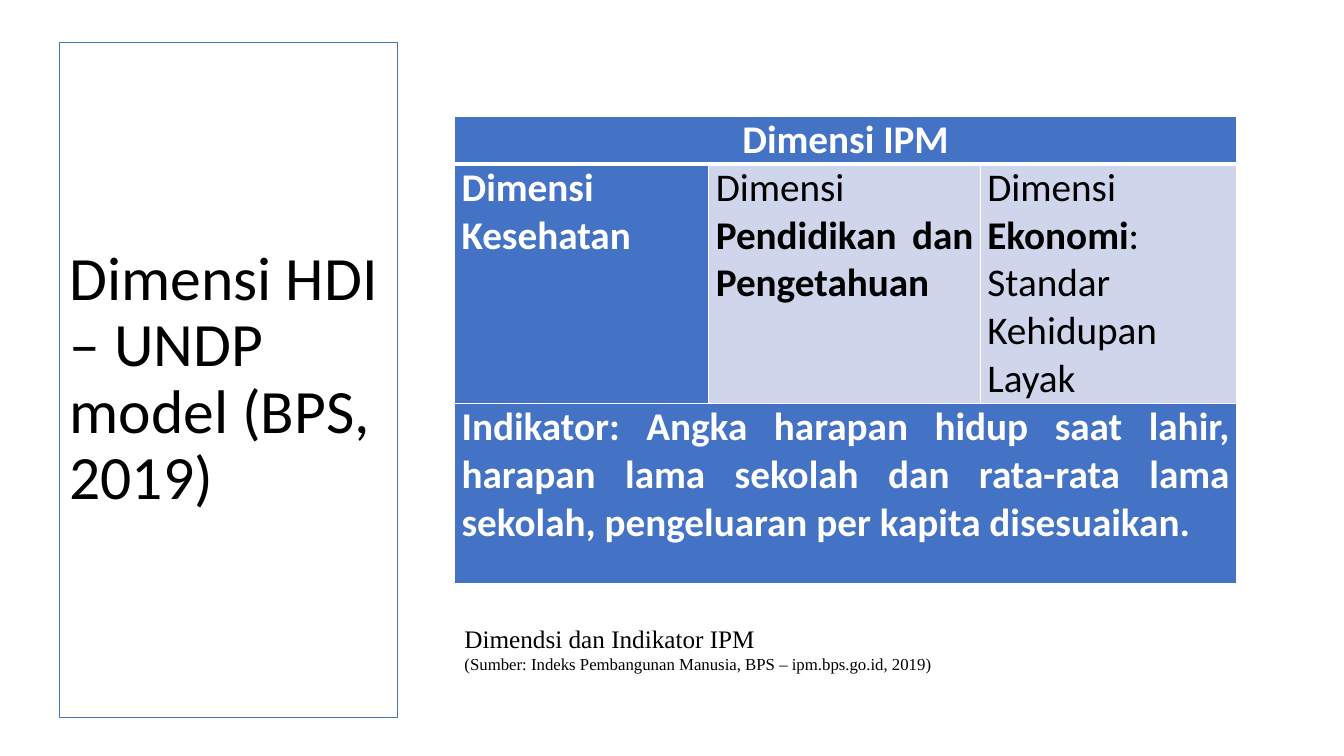
from pptx import Presentation
from pptx.dml.color import RGBColor
from pptx.enum.text import MSO_ANCHOR, MSO_AUTO_SIZE, PP_ALIGN
from pptx.oxml.ns import qn
from pptx.util import Pt
from lxml import etree

LEFT, CENTER, JUSTIFY = PP_ALIGN.LEFT, PP_ALIGN.CENTER, PP_ALIGN.JUSTIFY
MIDDLE = MSO_ANCHOR.MIDDLE
FIXED, GROW = MSO_AUTO_SIZE.NONE, MSO_AUTO_SIZE.SHAPE_TO_FIT_TEXT
TITLE_ONLY = 5

COLORS = {"blue": "4472C4", "pale": "CFD5EA", "white": "FFFFFF", "black": "000000"}

COLUMN_WIDTHS = (181.6, 194, 183)
ROW_HEIGHTS = (27, 161, 129)

# Row, column, fill, text colour, alignment, runs as (text, bold)
DIMENSION_CELLS = [
    (0, 0, "blue", "white", CENTER, [("Dimensi IPM", True)]),
    (1, 0, "blue", "white", JUSTIFY, [("Dimensi Kesehatan", True)]),
    (1, 1, "pale", "black", JUSTIFY,
     [("Dimensi ", False), ("Pendidikan dan Pengetahuan", True)]),
    (1, 2, "pale", "black", JUSTIFY,
     [("Dimensi ", False), ("Ekonomi", True), (": Standar Kehidupan Layak", False)]),
    (2, 0, "blue", "white", JUSTIFY,
     [("Indikator: Angka harapan hidup saat lahir, harapan lama sekolah dan "
       "rata-rata lama sekolah, pengeluaran per kapita disesuaikan.", True)]),
]


def color(name):
    return RGBColor.from_string(COLORS[name])


def format_font(font, size, color_name, typeface="Calibri", bold=False):
    font.name = typeface
    font.size = Pt(size)
    font.bold = bold
    font.color.rgb = color(color_name)


def set_borders(cell, bottom_width):
    properties = cell._tc.get_or_add_tcPr()
    widths = {"a:lnL": 1, "a:lnR": 1, "a:lnT": 1, "a:lnB": bottom_width}
    for position, (tag, width) in enumerate(widths.items()):
        line = etree.Element(qn(tag), w=str(Pt(width)))
        fill = etree.SubElement(line, qn("a:solidFill"))
        etree.SubElement(fill, qn("a:srgbClr"), val=COLORS["white"])
        properties.insert(position, line)


def add_title(slide, left, top, width, height):
    title = slide.shapes.title
    title.left, title.top, title.width, title.height = map(Pt, (left, top, width, height))
    title.line.color.rgb = color("blue")
    title.line.width = Pt(0.75)
    frame = title.text_frame
    frame.text = "Dimensi HDI – UNDP model (BPS, 2019)"
    frame.word_wrap = True
    frame.auto_size = FIXED
    frame.vertical_anchor = MIDDLE
    paragraph = frame.paragraphs[0]
    paragraph.alignment = LEFT
    paragraph.line_spacing = 0.9
    format_font(paragraph.runs[0].font, 44, "black")


def add_dimension_table(slide, left, top):
    table = slide.shapes.add_table(
        len(ROW_HEIGHTS), len(COLUMN_WIDTHS), Pt(left), Pt(top),
        Pt(sum(COLUMN_WIDTHS)), Pt(sum(ROW_HEIGHTS))).table
    for column, width in zip(table.columns, COLUMN_WIDTHS):
        column.width = Pt(width)
    for row, height in zip(table.rows, ROW_HEIGHTS):
        row.height = Pt(height)

    # Header and indicator rows span all columns
    for row in (0, 2):
        table.cell(row, 0).merge(table.cell(row, 2))

    for row, column, fill, text_color, alignment, runs in DIMENSION_CELLS:
        cell = table.cell(row, column)
        cell.margin_left = cell.margin_right = Pt(5.04)
        cell.margin_top = cell.margin_bottom = 0
        cell.fill.solid()
        cell.fill.fore_color.rgb = color(fill)
        paragraph = cell.text_frame.paragraphs[0]
        paragraph.alignment = alignment
        for text, bold in runs:
            run = paragraph.add_run()
            run.text = text
            format_font(run.font, 28, text_color, bold=bold)

    # White grid, heavier under the header
    for row in range(len(ROW_HEIGHTS)):
        for column in range(len(COLUMN_WIDTHS)):
            set_borders(table.cell(row, column), 3 if row == 0 else 1)


def add_caption(slide, left, top, width, height):
    frame = slide.shapes.add_textbox(Pt(left), Pt(top), Pt(width), Pt(height)).text_frame
    frame.text = ("Dimendsi dan Indikator IPM\n"
                  "(Sumber: Indeks Pembangunan Manusia, BPS – ipm.bps.go.id, 2019)")
    frame.word_wrap = True
    frame.auto_size = GROW
    frame.vertical_anchor = MIDDLE
    for paragraph, size in zip(frame.paragraphs, (18, 12)):
        format_font(paragraph.runs[0].font, size, "black", "Times New Roman")


def main():
    presentation = Presentation()
    presentation.slide_width, presentation.slide_height = Pt(960), Pt(540)
    slide = presentation.slides.add_slide(presentation.slide_layouts[TITLE_ONLY])
    add_title(slide, 42.5, 30.2, 241.2, 482.4)
    add_dimension_table(slide, 324.7, 82.8)
    add_caption(slide, 324.7, 440.6, sum(COLUMN_WIDTHS), 45.4)
    presentation.save("out.pptx")


if __name__ == "__main__":
    main()
